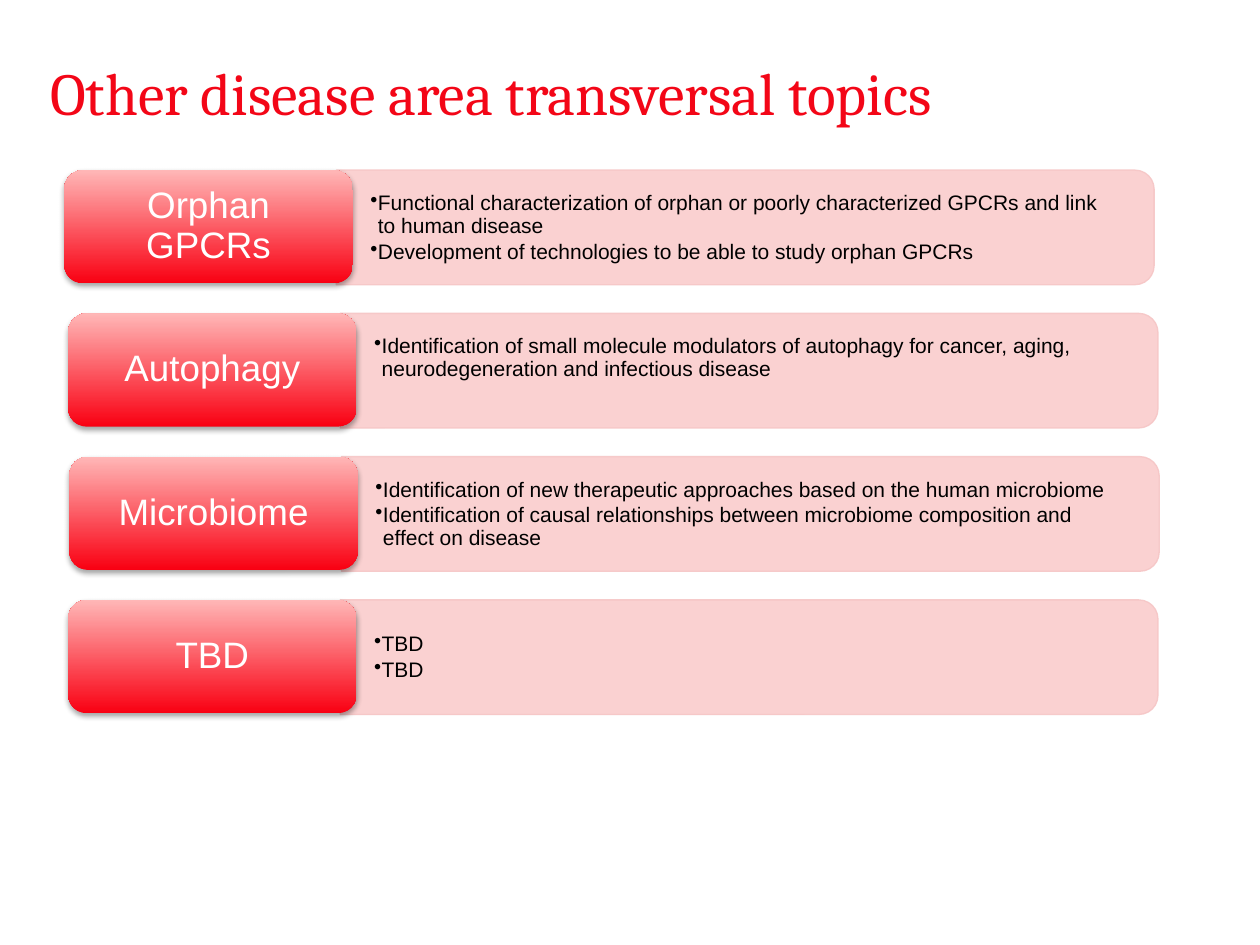
from dataclasses import dataclass

import lxml.etree
import pptx
import pptx.dml.color
import pptx.enum.shapes
import pptx.enum.text
import pptx.oxml
import pptx.oxml.ns
import pptx.util

Inches = pptx.util.Inches
Pt = pptx.util.Pt
RGB = pptx.dml.color.RGBColor.from_string
SHAPE = pptx.enum.shapes.MSO_SHAPE
ALIGN = pptx.enum.text.PP_ALIGN
ANCHOR = pptx.enum.text.MSO_ANCHOR


@dataclass(frozen=True)
class Theme:
    """Colours, fonts and type sizes of the slide."""
    title_red: str = "F30617"
    label_bottom: str = "F90012"
    label_top: str = "FFB7B7"
    panel_fill: str = "FACCCC"
    panel_line: str = "F6C6C6"
    black: str = "000000"
    white: str = "FFFFFF"
    heading_font: str = "Cambria"
    body_font: str = "Arial"
    title_size: int = 34
    label_size: int = 21
    detail_size: int = 12


THEME = Theme()
FIRST_TOP, ROW_PITCH = 1.35, 1.137
LABEL_WIDTH, LABEL_HEIGHT = 2.29, 0.9
PANEL_OFFSET, PANEL_WIDTH, PANEL_HEIGHT = 2.16, 6.49, 0.91
DETAIL_INSET, RAISED_INSET = 0.14, 0.35

TOPICS = [
    ("Orphan GPCRs", 0.51, DETAIL_INSET, [
        "Functional characterization of orphan or poorly characterized GPCRs and link to human disease",
        "Development of technologies to be able to study orphan GPCRs"]),
    ("Autophagy", 0.54, RAISED_INSET, [
        "Identification of small molecule modulators of autophagy for cancer, aging, "
        "neurodegeneration and infectious disease"]),
    ("Microbiome", 0.55, DETAIL_INSET, [
        "Identification of new therapeutic approaches based on the human microbiome",
        "Identification of causal relationships between microbiome composition and effect on disease"]),
    ("TBD", 0.54, DETAIL_INSET, ["TBD", "TBD"]),
]


def add_run(paragraph, text, font, size, color):
    """Add one formatted run to a paragraph."""
    run = paragraph.add_run()
    run.text = text
    run.font.name = font
    run.font.size = Pt(size)
    run.font.color.rgb = RGB(color)


def set_frame(frame, left, top, right, bottom):
    """Wrap the text, centre it vertically and set its insets in inches."""
    frame.word_wrap = True
    frame.vertical_anchor = ANCHOR.MIDDLE
    frame.margin_left, frame.margin_top = Inches(left), Inches(top)
    frame.margin_right, frame.margin_bottom = Inches(right), Inches(bottom)


def add_title(slide, text):
    """Place and fill the title placeholder."""
    title = slide.shapes.title
    title.left, title.top = Inches(0.4), Inches(0.42)
    title.width, title.height = Inches(9), Inches(0.62)
    set_frame(title.text_frame, 0, 0, 0, 0)
    heading = title.text_frame.paragraphs[0]
    heading.alignment = ALIGN.LEFT
    add_run(heading, text, THEME.heading_font, THEME.title_size, THEME.title_red)


def set_opacity(fill, percent):
    """Make a solid fill partly transparent."""
    color = fill._xPr.find(".//" + pptx.oxml.ns.qn("a:srgbClr"))
    alpha = lxml.etree.SubElement(color, pptx.oxml.ns.qn("a:alpha"))
    alpha.set("val", str(percent * 1000))


def add_panel(slide, left, top):
    """Add the pale panel, turned so that its round corners face right."""
    middle_x, middle_y = left + PANEL_WIDTH / 2, top + PANEL_HEIGHT / 2
    panel = slide.shapes.add_shape(
        SHAPE.ROUND_2_SAME_RECTANGLE,
        Inches(middle_x - PANEL_HEIGHT / 2), Inches(middle_y - PANEL_WIDTH / 2),
        Inches(PANEL_HEIGHT), Inches(PANEL_WIDTH))
    panel.rotation = 90
    panel.shadow.inherit = False
    panel.line.width = Pt(0.75)
    for fill, color in ((panel.fill, THEME.panel_fill), (panel.line.fill, THEME.panel_line)):
        fill.solid()
        fill.fore_color.rgb = RGB(color)
    set_opacity(panel.fill, 90)
    set_opacity(panel.line.fill, 90)


def add_details(slide, left, top, bottom_inset, details):
    """Add the bulleted details that lie over a panel."""
    box = slide.shapes.add_textbox(Inches(left), Inches(top), Inches(6.46), Inches(0.82))
    set_frame(box.text_frame, 0.27, DETAIL_INSET, 0.27, bottom_inset)
    for index, detail in enumerate(details):
        paragraph = box.text_frame.add_paragraph() if index else box.text_frame.paragraphs[0]
        properties = paragraph._p.get_or_add_pPr()
        properties.set("marL", str(Inches(0.06)))
        properties.set("indent", str(-Inches(0.06)))
        bullet = lxml.etree.SubElement(properties, pptx.oxml.ns.qn("a:buChar"))
        bullet.set("char", "•")
        paragraph.level = 1
        paragraph.line_spacing = 0.9
        paragraph.space_after = Pt(1.8)
        add_run(paragraph, detail, THEME.body_font, THEME.detail_size, THEME.black)


def add_soft_shadow(shape):
    """Give a shape a soft shadow below it."""
    shape.shadow.inherit = False
    effects = shape._element.spPr.find(pptx.oxml.ns.qn("a:effectLst"))
    effects.append(pptx.oxml.parse_xml(
        f'<a:outerShdw {pptx.oxml.ns.nsdecls("a")} blurRad="{Pt(3.1)}" dist="{Pt(1.8)}" '
        f'dir="5400000" rotWithShape="0"><a:srgbClr val="{THEME.black}">'
        '<a:alpha val="35000"/></a:srgbClr></a:outerShdw>'))


def add_label(slide, left, top, topic):
    """Add the red topic label."""
    label = slide.shapes.add_shape(
        SHAPE.ROUNDED_RECTANGLE, Inches(left), Inches(top),
        Inches(LABEL_WIDTH), Inches(LABEL_HEIGHT))
    label.fill.gradient()
    label.fill.gradient_angle = 90
    for stop, color in zip(label.fill.gradient_stops, (THEME.label_bottom, THEME.label_top)):
        stop.color.rgb = RGB(color)
    label.line.fill.background()
    add_soft_shadow(label)
    set_frame(label.text_frame, 0.14, 0.08, 0.14, 0.08)
    paragraph = label.text_frame.paragraphs[0]
    paragraph.alignment = ALIGN.CENTER
    paragraph.line_spacing = 0.9
    add_run(paragraph, topic, THEME.body_font, THEME.label_size, THEME.white)


def main():
    """Build and save the slide."""
    deck = pptx.Presentation()
    deck.slide_width, deck.slide_height = Inches(10), Inches(7.5)
    slide = deck.slides.add_slide(deck.slide_layouts[5])
    add_title(slide, "Other disease area transversal topics")
    for row, (topic, left, bottom_inset, details) in enumerate(TOPICS):
        top = FIRST_TOP + row * ROW_PITCH
        add_panel(slide, left + PANEL_OFFSET, top)
        add_details(slide, left + PANEL_OFFSET, top + 0.05, bottom_inset, details)
        add_label(slide, left, top, topic)
    deck.save("out.pptx")


if __name__ == "__main__":
    main()
